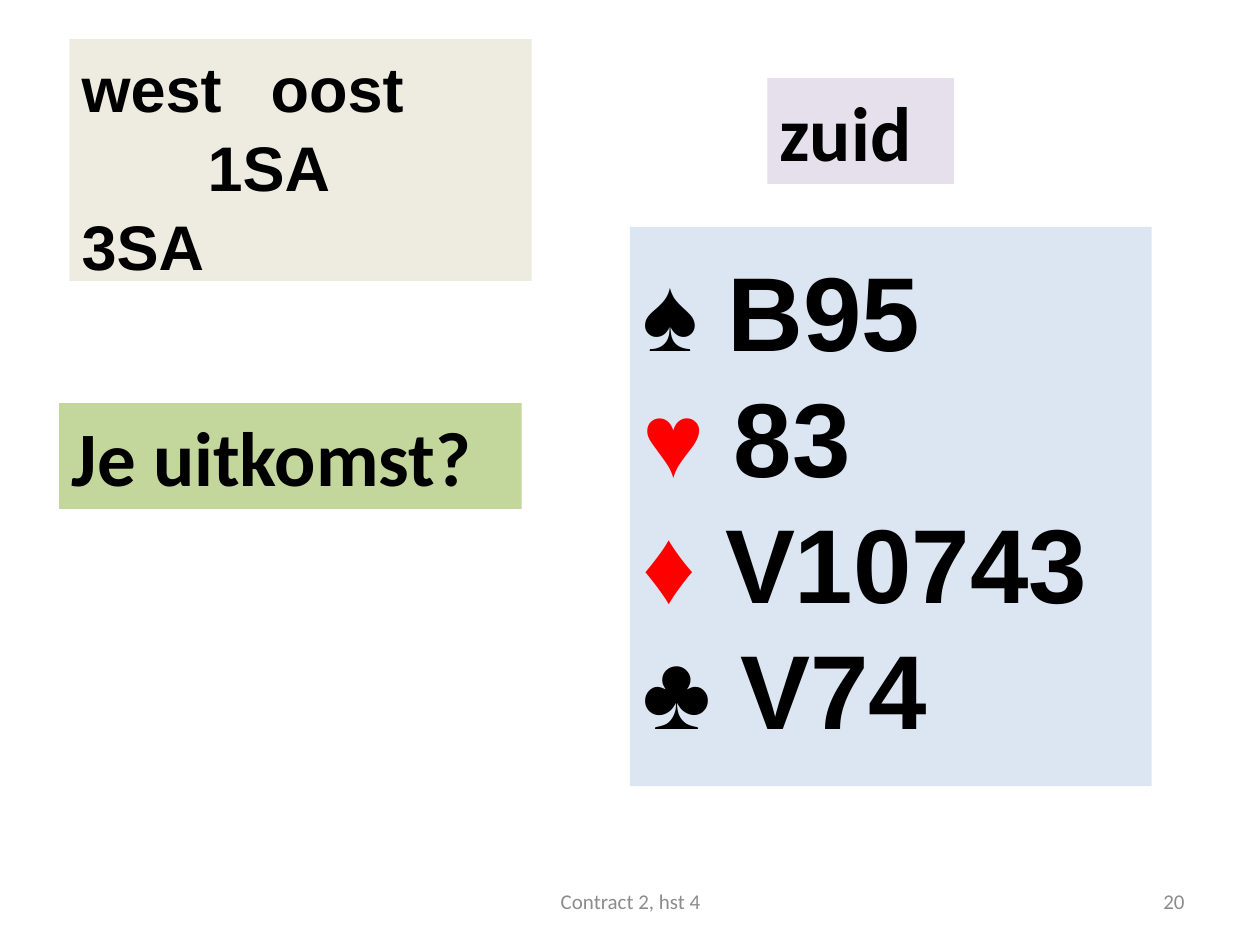
from pptx import Presentation
from pptx.dml.color import RGBColor
from pptx.enum.shapes import MSO_SHAPE as Shape
from pptx.enum.text import MSO_ANCHOR as Anchor, PP_ALIGN as Align
from pptx.util import Emu, Pt

PX = 9144  # EMU per px, 100 px to the inch
BLACK, RED, GREY = "000000", "FF0000", "8C8C8C"

# Each paragraph is a list of (text, colour) runs.
HAND = [
    [("♠ B95", BLACK)],
    [("♥", RED), (" 83", BLACK)],
    [("♦", RED), (" V10743", BLACK)],
    [("♣ V74", BLACK)],
]
BIDDING = [[(line, BLACK)] for line in ("west\toost", "\t\t1SA", "3SA")]

HEADING = dict(name="Calibri", size=Pt(44), bold=True)
SMALL = dict(name="Calibri", size=Pt(12), bold=False)

# box (left, top, width, height), fill, paragraphs, font, paragraph format, frame format
PANELS = [
    ((500, 180, 414, 444), "DCE6F2", HAND,
     dict(name="Arial", size=Pt(60), bold=True), {},
     dict(margin_top=Emu(16 * PX), margin_bottom=Emu(24 * PX))),
    ((55, 31, 367, 192), "EEECE1", BIDDING,
     dict(name="Arial", size=Pt(36), bold=True), dict(line_spacing=1.05), {}),
    ((47, 320, 367, 84), "C3D69B", [[("Je uitkomst?", BLACK)]], HEADING, {}, {}),
    ((609, 62, 148, 84), "E6E0EC", [[("zuid", BLACK)]], HEADING, {}, {}),
    ((717, 695, 233, 40), None, [[("20", GREY)]], SMALL,
     dict(alignment=Align.RIGHT), dict(vertical_anchor=Anchor.MIDDLE)),
    ((342, 695, 317, 40), None, [[("Contract 2, hst 4", GREY)]], SMALL,
     dict(alignment=Align.CENTER), dict(vertical_anchor=Anchor.MIDDLE)),
]


def color(value):
    return RGBColor.from_string(value)


def set_all(target, values):
    for name, value in values.items():
        setattr(target, name, value)


def add_box(slide, box, fill):
    """Add a filled rectangle, or a plain text box when fill is None."""
    place = [Emu(length * PX) for length in box]
    if fill is None:
        return slide.shapes.add_textbox(*place)
    shape = slide.shapes.add_shape(Shape.RECTANGLE, *place)
    shape.shadow.inherit = False
    shape.fill.solid()
    shape.fill.fore_color.rgb = color(fill)
    shape.line.fill.background()
    return shape


def write(frame, paragraphs, font, paragraph_format, frame_format):
    set_all(frame, dict(word_wrap=True, vertical_anchor=Anchor.TOP) | frame_format)
    for index, runs in enumerate(paragraphs):
        paragraph = frame.add_paragraph() if index else frame.paragraphs[0]
        set_all(paragraph, dict(alignment=Align.LEFT) | paragraph_format)
        for text, text_color in runs:
            run = paragraph.add_run()
            run.text = text
            set_all(run.font, font)
            run.font.color.rgb = color(text_color)


def main():
    presentation = Presentation()
    presentation.slide_width = Emu(1000 * PX)
    presentation.slide_height = Emu(750 * PX)
    slide = presentation.slides.add_slide(presentation.slide_layouts[6])
    for box, fill, *content in PANELS:
        write(add_box(slide, box, fill).text_frame, *content)
    presentation.save("out.pptx")


if __name__ == "__main__":
    main()
